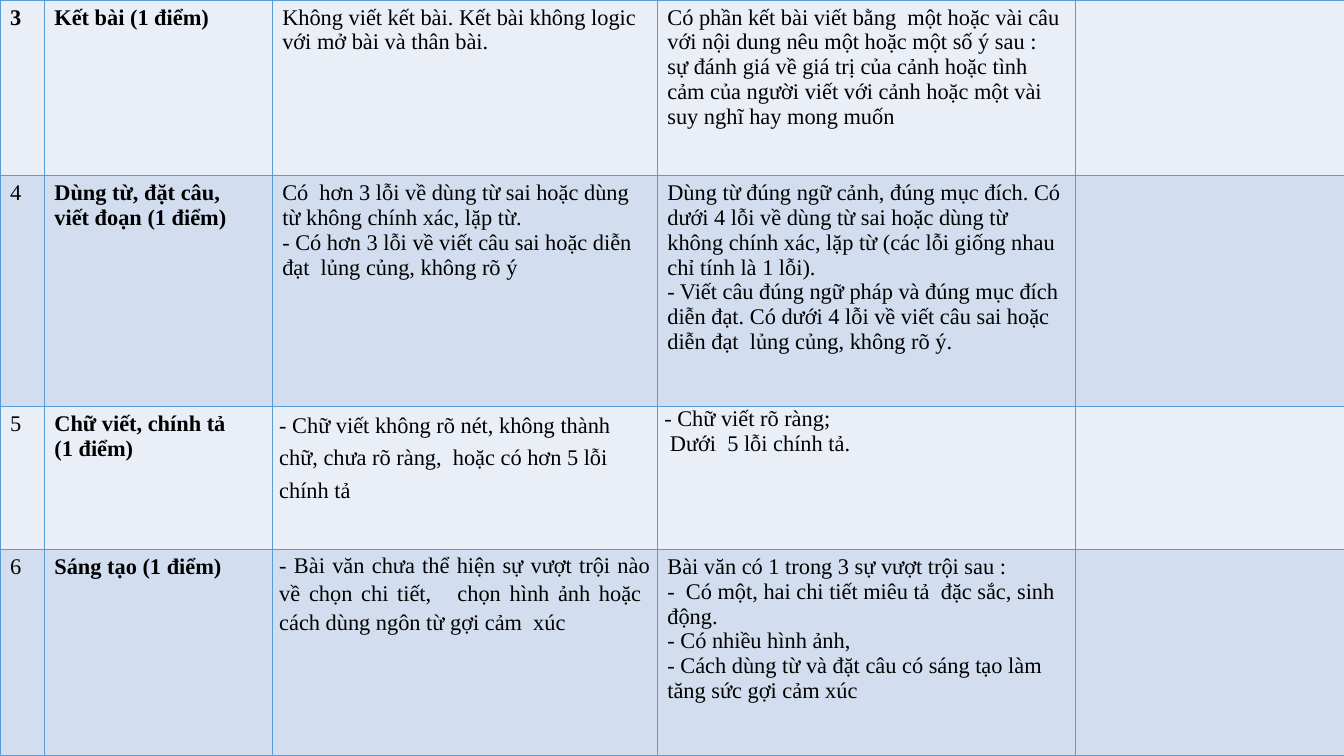
from dataclasses import dataclass

import pptx
import pptx.dml.color
import pptx.enum.text
import pptx.oxml
import pptx.oxml.ns
import pptx.util
from pptx.util import Inches


@dataclass(frozen=True)
class Theme:
    font: str = "Times New Roman"
    size: int = 16
    text: str = "000000"
    border: str = "5B9BD5"
    border_width: int = 1
    bands: tuple[str, ...] = ("EAEFF7", "D2DEEF")


@dataclass(frozen=True)
class Entry:
    lines: tuple[str, ...] = ()
    bold: bool = False
    tight: bool = False
    spacing: float = 1.0
    after: int = 0
    justify: bool = False


@dataclass(frozen=True)
class Criterion:
    height: float
    number: Entry
    name: Entry
    not_met: Entry
    met: Entry
    mark: Entry = Entry()

    def entries(self) -> tuple[Entry, ...]:
        return self.number, self.name, self.not_met, self.met, self.mark


THEME = Theme()
COLUMN_WIDTHS = (0.44, 2.26, 3.82, 4.15, 2.67)
CRITERIA = (
    Criterion(
        1.74,
        Entry(("3",), bold=True),
        Entry(("Kết bài (1 điểm)",), bold=True),
        Entry(("Không viết kết bài. Kết bài không logic với mở bài và thân bài.",)),
        Entry((
            "Có phần kết bài viết bằng  một hoặc vài câu với nội dung nêu một hoặc "
            "một số ý sau :  sự đánh giá về giá trị của cảnh hoặc tình cảm của người "
            "viết với cảnh hoặc một vài suy nghĩ hay mong muốn",
        )),
    ),
    Criterion(
        2.29,
        Entry(("4",)),
        Entry(("Dùng từ, đặt câu,", "viết đoạn (1 điểm)"), bold=True),
        Entry((
            "Có  hơn 3 lỗi về dùng từ sai hoặc dùng từ không chính xác, lặp từ.",
            "- Có hơn 3 lỗi về viết câu sai hoặc diễn đạt  lủng củng, không rõ ý",
        )),
        Entry((
            "Dùng từ đúng ngữ cảnh, đúng mục đích. Có dưới 4 lỗi về dùng từ sai hoặc "
            "dùng từ không chính xác, lặp từ (các lỗi giống nhau chỉ tính là 1 lỗi).",
            "- Viết câu đúng ngữ pháp và đúng mục đích diễn đạt. Có dưới 4 lỗi về "
            "viết câu sai hoặc diễn đạt  lủng củng, không rõ ý.",
        )),
    ),
    Criterion(
        1.42,
        Entry(("5",)),
        Entry(("Chữ viết, chính tả", "(1 điểm)"), bold=True),
        Entry((
            "- Chữ viết không rõ nét, không thành chữ, chưa rõ ràng,  hoặc có hơn "
            "5 lỗi chính tả",
        ), tight=True, spacing=1.3),
        Entry(("- Chữ viết rõ ràng;", " Dưới  5 lỗi chính tả."), tight=True),
    ),
    Criterion(
        2.05,
        Entry(("6",)),
        Entry(("Sáng tạo (1 điểm)",), bold=True),
        Entry((
            "- Bài văn chưa thể hiện sự vượt trội nào về chọn chi tiết,   chọn hình "
            "ảnh hoặc  cách dùng ngôn từ gợi cảm  xúc",
        ), tight=True, spacing=1.15, after=10, justify=True),
        Entry((
            "Bài văn có 1 trong 3 sự vượt trội sau :",
            "-  Có một, hai chi tiết miêu tả  đặc sắc, sinh động.",
            "- Có nhiều hình ảnh,",
            "- Cách dùng từ và đặt câu có sáng tạo làm tăng sức gợi cảm xúc",
        )),
    ),
)


def rgb(value: str) -> pptx.dml.color.RGBColor:
    return pptx.dml.color.RGBColor.from_string(value)


def style_cell(cell, band: str) -> None:
    properties = cell._tc.get_or_add_tcPr()
    for side in ("lnL", "lnR", "lnT", "lnB"):
        properties.append(pptx.oxml.parse_xml(
            f'<a:{side} {pptx.oxml.ns.nsdecls("a")} '
            f'w="{pptx.util.Pt(THEME.border_width)}"><a:solidFill>'
            f'<a:srgbClr val="{THEME.border}"/></a:solidFill></a:{side}>'
        ))
    cell.fill.solid()
    cell.fill.fore_color.rgb = rgb(band)


def write_entry(cell, entry: Entry) -> None:
    if entry.tight:
        cell.margin_left = cell.margin_right = Inches(0.07)
        cell.margin_top = cell.margin_bottom = Inches(0)
    tf = cell.text_frame
    for i, line in enumerate(entry.lines):
        p = tf.add_paragraph() if i else tf.paragraphs[0]
        p.line_spacing = entry.spacing
        p.space_after = pptx.util.Pt(entry.after)
        if entry.justify:
            p.alignment = pptx.enum.text.PP_ALIGN.JUSTIFY
        r = p.add_run()
        r.text = line
        r.font.name = THEME.font
        r.font.size = pptx.util.Pt(THEME.size)
        r.font.bold = entry.bold
        r.font.color.rgb = rgb(THEME.text)


def add_rubric(s, criteria: tuple[Criterion, ...]) -> None:
    table = s.shapes.add_table(
        len(criteria), len(COLUMN_WIDTHS),
        Inches(0), Inches(0), Inches(13.33), Inches(7.5),
    ).table
    table.first_row = False
    table.horz_banding = False
    for column, width in zip(table.columns, COLUMN_WIDTHS):
        column.width = Inches(width)
    for i, criterion in enumerate(criteria):
        table.rows[i].height = Inches(criterion.height)
        for cell, entry in zip(table.rows[i].cells, criterion.entries()):
            style_cell(cell, THEME.bands[i % len(THEME.bands)])
            write_entry(cell, entry)


def main() -> None:
    prs = pptx.Presentation()
    prs.slide_width = Inches(13.33)
    prs.slide_height = Inches(7.5)
    s = prs.slides.add_slide(prs.slide_layouts[6])
    add_rubric(s, CRITERIA)
    prs.save("out.pptx")


if __name__ == "__main__":
    main()
